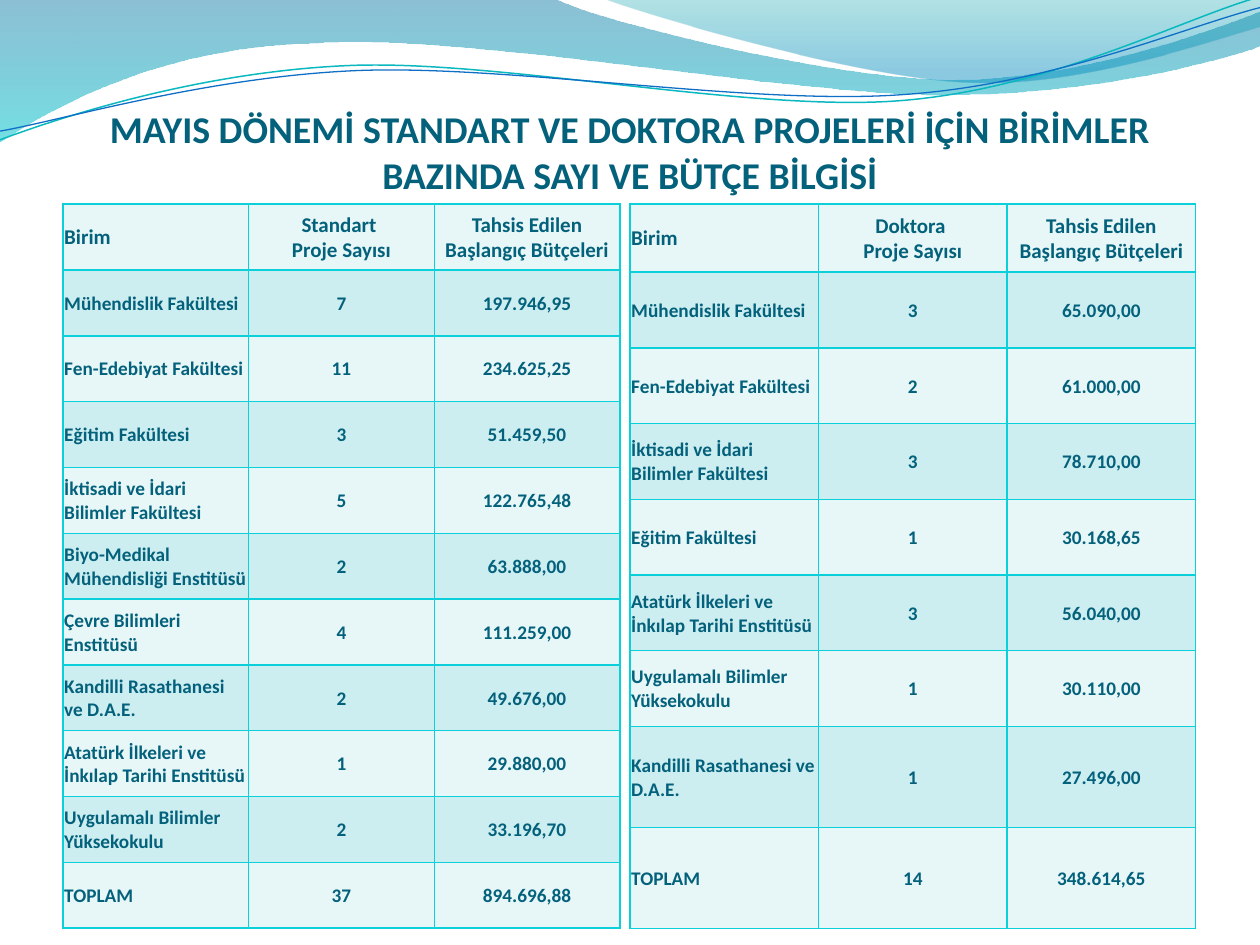
from itertools import chain
from math import cos, radians, sin

from lxml.etree import SubElement
from pptx import Presentation
from pptx.dml.color import RGBColor
from pptx.enum.text import MSO_ANCHOR, PP_ALIGN
from pptx.oxml.ns import qn
from pptx.util import Pt

EMU_PER_PX = 9144  # 100 px to the inch


def px(n):
    return round(n * EMU_PER_PX)


def rgb(color):
    return RGBColor.from_string(color)


def turn(points, degrees, pivot):
    c, n = cos(radians(degrees)), sin(radians(degrees))
    cx, cy = pivot
    return [(cx + (x - cx) * c - (y - cy) * n, cy + (x - cx) * n + (y - cy) * c)
            for x, y in points]


class SlideBuilder:
    font = "Calibri"
    ink = "04617B"
    border = "0BD0D9"
    bands = ("E7F7F8", "CCEEF1")

    def __init__(self, s):
        self.s = s

    def outline(self, start, segments, close, tilt=0, pivot=(0, 0)):
        """Freeform of line (1 point) and cubic curve (3 points) segments."""
        points = turn([start, *chain(*segments)], -tilt, pivot)
        points = [(px(x), px(y)) for x, y in points]
        fb = self.s.shapes.build_freeform(*points[0], scale=1.0)
        fb.add_line_segments(points[1:], close=close)
        sp = fb.convert_to_shape()
        sp.shadow.inherit = False
        sp.rotation = tilt
        lines = sp.element.spPr.iter(qn("a:lnTo"))
        lines = iter(list(lines))
        for seg in segments:
            first, *others = [next(lines) for _ in seg]
            if others:
                first.tag = qn("a:cubicBezTo")
            for line in others:
                first.append(line[0])
                line.getparent().remove(line)
        return sp

    def wave(self, start, segments, stops):
        """Closed shape with a top-down gradient; stops are (position, colour, opacity %)."""
        sp = self.outline(start, segments, True)
        sp.line.fill.background()
        sp.fill.gradient()
        sp.fill.gradient_angle = 270
        for stop, (position, color, _) in zip(sp.fill.gradient_stops, stops):
            stop.position = position
            stop.color.rgb = rgb(color)
        for clr, (_, _, opacity) in zip(sp.element.spPr.iter(qn("a:srgbClr")), stops):
            SubElement(clr, qn("a:alpha"), val=str(opacity * 1000))

    def curve(self, start, segments, color, width, tilt, pivot):
        sp = self.outline(start, segments, False, tilt, pivot)
        sp.fill.background()
        sp.line.color.rgb = rgb(color)
        sp.line.width = Pt(width)

    def style(self, tf, size, align):
        for p in tf.paragraphs:
            p.alignment = align
            for r in p.runs:
                r.font.name = self.font
                r.font.size = Pt(size)
                r.font.bold = True
                r.font.color.rgb = rgb(self.ink)

    def title(self, x, y, w, h, text, size):
        tf = self.s.shapes.add_textbox(px(x), px(y), px(w), px(h)).text_frame
        tf.word_wrap = True
        tf.vertical_anchor = MSO_ANCHOR.BOTTOM
        tf.margin_left = tf.margin_right = tf.margin_bottom = 0
        tf.margin_top = px(5)
        tf.text = text
        self.style(tf, size, PP_ALIGN.CENTER)

    def cell_borders(self, cell):
        tcPr = cell._tc.get_or_add_tcPr()
        for side in ("lnL", "lnR", "lnT", "lnB"):
            ln = SubElement(tcPr, qn(f"a:{side}"), w=str(Pt(1)))
            fill = SubElement(ln, qn("a:solidFill"))
            SubElement(fill, qn("a:srgbClr"), val=self.border)

    def table(self, x, y, w, h, rows, weights):
        """Table with equal columns and row heights shared out by weight."""
        n_cols = len(rows[0])
        tbl = self.s.shapes.add_table(len(rows), n_cols, px(x), px(y), px(w), px(h)).table
        tbl.first_row = tbl.horz_banding = False
        for col in tbl.columns:
            col.width = px(w) // n_cols
        for i, (row, weight) in enumerate(zip(rows, weights)):
            tbl.rows[i].height = px(h) * weight // sum(weights)
            for j, text in enumerate(row):
                cell = tbl.cell(i, j)
                self.cell_borders(cell)
                cell.fill.solid()
                cell.fill.fore_color.rgb = rgb(self.bands[i % 2])
                cell.vertical_anchor = MSO_ANCHOR.MIDDLE
                cell.margin_left = cell.margin_right = cell.margin_top = px(1)
                cell.margin_bottom = 0
                cell.text_frame.text = text
                self.style(cell.text_frame, 11 if i else 12,
                           PP_ALIGN.CENTER if j else PP_ALIGN.LEFT)


ENGINEERING = "Mühendislik Fakültesi"
ARTS = "Fen-Edebiyat Fakültesi"
EDUCATION = "Eğitim Fakültesi"
ECONOMICS = "İktisadi ve İdari Bilimler Fakültesi"
OBSERVATORY = "Kandilli Rasathanesi ve D.A.E."
HISTORY = "Atatürk İlkeleri ve İnkılap Tarihi Enstitüsü"
APPLIED = "Uygulamalı Bilimler Yüksekokulu"


def header(kind):
    return ("Birim", f"{kind} \nProje Sayısı", "Tahsis Edilen Başlangıç Bütçeleri")


STANDARD_ROWS = [
    header("Standart"),
    (ENGINEERING, "7", "197.946,95"),
    (ARTS, "11", "234.625,25"),
    (EDUCATION, "3", "51.459,50"),
    (ECONOMICS, "5", "122.765,48"),
    ("Biyo-Medikal Mühendisliği Enstitüsü", "2", "63.888,00"),
    ("Çevre Bilimleri Enstitüsü", "4", "111.259,00"),
    (OBSERVATORY, "2", "49.676,00"),
    (HISTORY, "1", "29.880,00"),
    (APPLIED, "2", "33.196,70"),
    ("TOPLAM", "37", "894.696,88"),
]
DOCTORAL_ROWS = [
    header("Doktora"),
    (ENGINEERING, "3", "65.090,00"),
    (ARTS, "2", "61.000,00"),
    (ECONOMICS, "3", "78.710,00"),
    (EDUCATION, "1", "30.168,65"),
    (HISTORY, "3", "56.040,00"),
    (APPLIED, "1", "30.110,00"),
    (OBSERVATORY, "1", "27.496,00"),
    ("TOPLAM", "14", "348.614,65"),
]


def main():
    prs = Presentation()
    prs.slide_width, prs.slide_height = px(1000), px(750)
    b = SlideBuilder(prs.slides.add_slide(prs.slide_layouts[6]))

    b.wave((0, 0), [
        [(440, -1)],
        [(476, 17), (664, 63), (758, 63)],
        [(853, 63), (958, 26), (1000, 9)],
        [(1001, 36)],
        [(983, 44), (870, 76), (746, 75)],
        [(622, 75), (382, 28), (257, 34)],
        [(129, 36), (46, 83), (-1, 113)],
    ], [(0, "0074A1", 45), (1, "00C6CF", 55)])
    b.wave((479, -1), [
        [(509, 11), (682, 62), (769, 65)],
        [(856, 69), (961, 32), (1000, 21)],
        [(1000, 0)],
    ], [(0, "00A1A9", 30), (0.8, "008BBF", 45)])
    b.curve((0, 111), [
        [(48, 93), (158, 57), (277, 52)],
        [(395, 47), (593, 89), (713, 80)],
        [(833, 71), (938, 15), (998, -2)],
    ], "0AB8BF", 0.85, -2.7, (499, 57))
    b.curve((0, 104), [
        [(47, 96), (164, 61), (283, 56)],
        [(403, 51), (597, 84), (717, 75)],
        [(836, 67), (941, 21), (1000, 6)],
    ], "0F6FC6", 0.75, -2.7, (499, 59))

    b.title(50, 77, 900, 79, "MAYIS DÖNEMİ STANDART VE DOKTORA PROJELERİ İÇİN "
            "BİRİMLER BAZINDA SAYI VE BÜTÇE BİLGİSİ", 21.6)
    b.table(50, 162, 442, 575, STANDARD_ROWS, [1] * len(STANDARD_ROWS))
    b.table(500, 162, 449, 575, DOCTORAL_ROWS, [54] + [60] * 6 + [80] * 2)
    prs.save("out.pptx")


if __name__ == "__main__":
    main()
